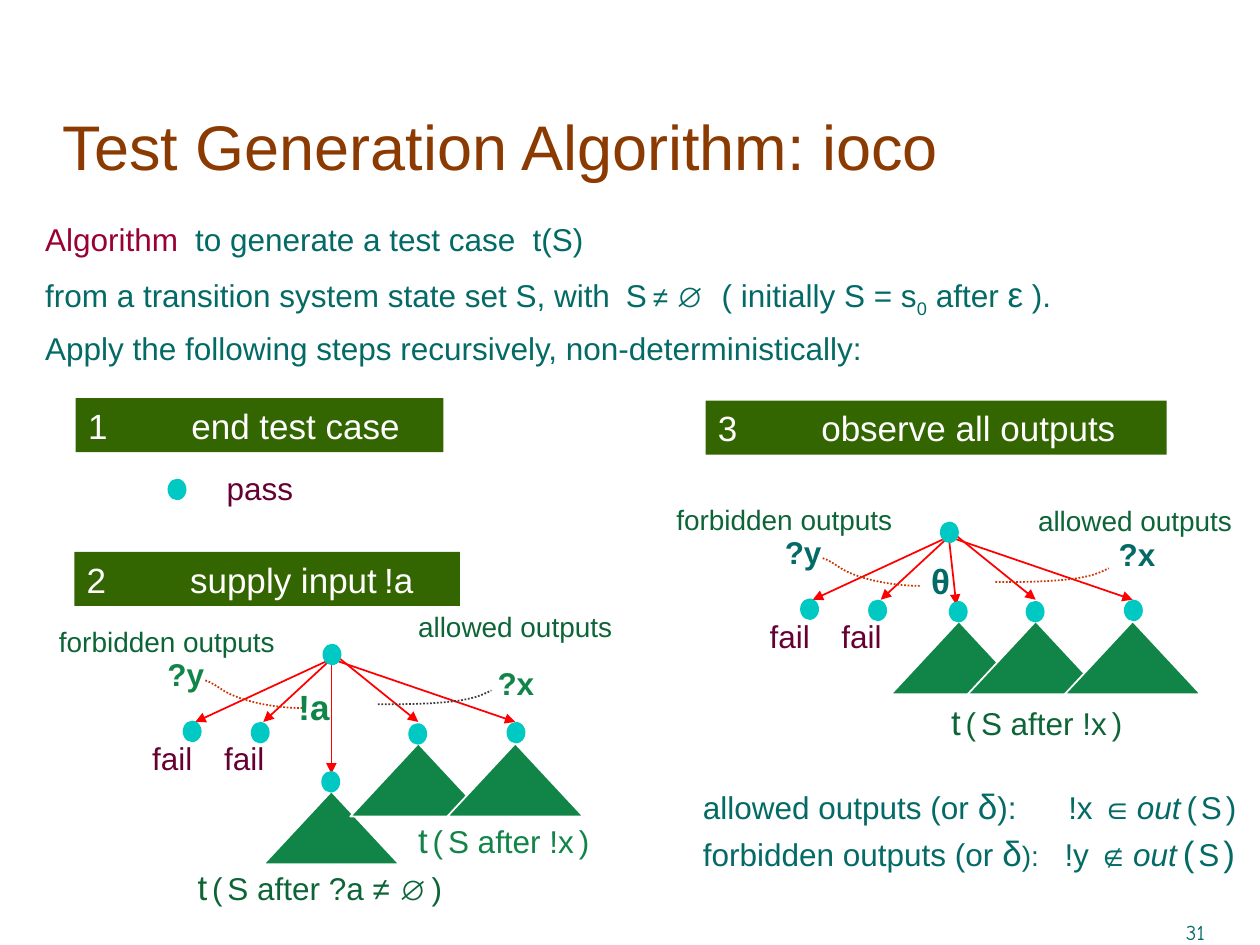
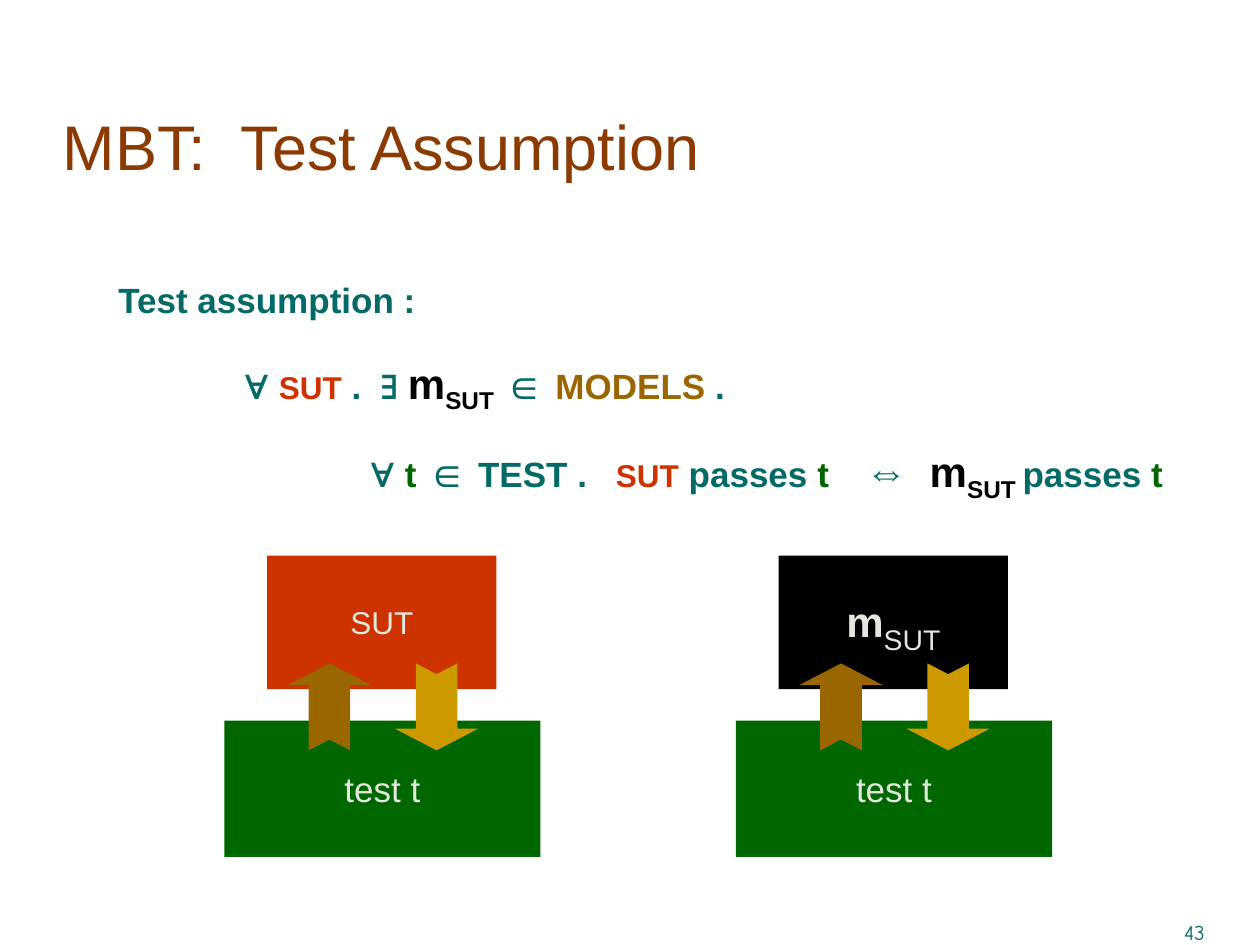
from lxml.etree import SubElement
from pptx import Presentation
from pptx.dml.color import RGBColor
from pptx.enum.dml import MSO_LINE
from pptx.enum.shapes import MSO_CONNECTOR, MSO_SHAPE
from pptx.enum.text import MSO_ANCHOR, PP_ALIGN
from pptx.oxml.ns import qn
from pptx.util import Inches, Pt

TEAL, BROWN, WINE, RED = "036A66", "8B3A02", "660033", "CC3300"
BAR, LEAF, PINE, DOT = "336600", "118548", "0D6537", "00C8C3"
GREEN, OCHRE, GOLD, PALE = "006600", "996600", "CC9900", "E3E7DE"
BLACK, WHITE = "000000", "FFFFFF"


def rgb(code):
    return RGBColor.from_string(code)


def add_tabs(para, stops):
    tabs = SubElement(para._p.get_or_add_pPr(), qn("a:tabLst"))
    for stop in stops:
        SubElement(tabs, qn("a:tab"), pos=str(Inches(stop)), algn="l")


def add_run(para, face, color, text, size, style="", tint=None):
    """Add one run; style letters are b bold, i italic, s subscript."""
    run = para.add_run()
    run.text = text
    font = run.font
    font.name, font.size = face, Pt(size)
    font.bold, font.italic = "b" in style, "i" in style
    font.color.rgb = rgb(tint or color)
    if "s" in style:
        run._r.get_or_add_rPr().set("baseline", "-25000")


def write(para, runs, color, face="Arial", tabs=(), ls=None, gap=0, align=None):
    """Fill a paragraph from runs of (text, size, style, tint)."""
    if tabs:
        add_tabs(para, tabs)
    if ls:
        para.line_spacing = ls
    if gap:
        para.space_before = Pt(gap)
    para.alignment = align
    for run in runs:
        add_run(para, face, color, *run)


def add_text(slide, box, runs, color, **look):
    frame = slide.shapes.add_textbox(*map(Inches, box)).text_frame
    frame.word_wrap = True
    write(frame.paragraphs[0], runs, color, **look)
    return frame


def add_form(slide, kind, box, fill, edge=None):
    form = slide.shapes.add_shape(kind, *map(Inches, box))
    form.shadow.inherit = False
    form.fill.solid()
    form.fill.fore_color.rgb = rgb(fill)
    if edge:
        form.line.color.rgb = rgb(edge)
        form.line.width = Pt(1)
    else:
        form.line.fill.background()
    return form


def add_block(slide, box, fill, runs):
    form = add_form(slide, MSO_SHAPE.RECTANGLE, box, fill)
    form.text_frame.word_wrap = False
    form.text_frame.vertical_anchor = MSO_ANCHOR.MIDDLE
    write(form.text_frame.paragraphs[0], runs, PALE, align=PP_ALIGN.CENTER)


def add_bar(slide, box, text, tabs):
    """Draw the heading of one step of the algorithm."""
    form = add_form(slide, MSO_SHAPE.RECTANGLE, box, BAR)
    frame = form.text_frame
    frame.vertical_anchor = MSO_ANCHOR.TOP
    write(frame.paragraphs[0], [(text, 20)], WHITE, tabs=tabs, align=PP_ALIGN.LEFT)


def add_dot(slide, x, y):
    add_form(slide, MSO_SHAPE.OVAL, (x, y, 0.15, 0.17), DOT)


def add_arrow(slide, start, end):
    line = slide.shapes.add_connector(
        MSO_CONNECTOR.STRAIGHT, *map(Inches, (*start, *end)))
    line.line.color.rgb = rgb("FF0000")
    line.line.width = Pt(1)
    props = line._element.spPr
    SubElement(props.get_or_add_ln(), qn("a:tailEnd"), type="triangle")
    SubElement(props, qn("a:effectLst"))


def add_curve(slide, x, y, knots, color, steps=10):
    """Draw dotted cubic curves: a start, then three knots for each curve."""
    knots = [(x + dx, y + dy) for dx, dy in knots]
    points = []
    for i in range(0, len(knots) - 1, 3):
        for step in range(1, steps + 1):
            t = step / steps
            parts = ((1 - t) ** 3, 3 * t * (1 - t) ** 2, 3 * t * t * (1 - t), t ** 3)
            points.append(tuple(
                Inches(sum(w * knot[axis] for w, knot in zip(parts, knots[i:i + 4])))
                for axis in (0, 1)))
    pen = slide.shapes.build_freeform(*map(Inches, knots[0]))
    pen.add_line_segments(points, close=False)
    curve = pen.convert_to_shape()
    curve.shadow.inherit = False
    curve.fill.background()
    curve.line.color.rgb = rgb(color)
    curve.line.width = Pt(1)
    curve.line.dash_style = MSO_LINE.ROUND_DOT


def add_tree(slide, x, y, mid, tip, peak, mark, curve, spots):
    """Draw a test tree whose root dot is at x, y; spots place the right labels."""
    def at(dx, dy):
        return x + dx, y + dy

    for end in (-1.01, 0.62), (-0.47, 0.62), tip, (1.53, 0.62):
        add_arrow(slide, at(0.07, 0.12), at(*end))
    add_arrow(slide, at(0.14, 0.12), at(0.76, 0.62))
    for top in peak, (0.22, 0.79), (0.99, 0.79):
        add_form(slide, MSO_SHAPE.ISOSCELES_TRIANGLE, (*at(*top), 1.08, 0.58), LEAF, WHITE)
    add_curve(slide, *at(-0.93, 0.29), [
        (0, 0), (0.06, 0.02), (0.11, 0.06), (0.16, 0.09),
        (0.32, 0.18), (0.59, 0.22), (0.77, 0.22)], RED)
    add_curve(slide, *at(0.44, 0.37), [
        (0, 0.11), (0.21, 0.11), (0.43, 0.11), (0.65, 0.08), (0.7, 0.07),
        (0.76, 0.06), (0.81, 0.04), (0.84, 0.03), (0.9, 0), (0.9, 0)], curve)
    for dot in (0, 0), (-1.11, 0.61), (-0.57, 0.62), mid, (0.68, 0.63), (1.46, 0.62):
        add_dot(slide, *at(*dot))
    for dx in -1.45, -0.88:
        add_text(slide, (*at(dx, 0.71), 0.69, 0.4), [("fail", 18)], WINE)
    allowed, out = spots
    add_text(slide, (*at(-2.19, -0.2), 2.2, 0.37), [("forbidden outputs", 16)], PINE)
    add_text(slide, (*at(*allowed), 1.86, 0.37), [("allowed outputs", 16)], PINE)
    add_text(slide, (*at(-1.33, 0.04), 0.58, 0.4), [("?y", 18, "b")], mark)
    add_text(slide, (*at(*out), 0.62, 0.4), [("?x", 18, "b")], mark)


def add_after(slide, box, state, color):
    """Label a subtree with t(state)."""
    runs = [("t", 20), (" ", 10), ("(", 18), (" ", 10), *state, (" ", 10), (")", 18)]
    add_text(slide, box, runs, color)


def out_set(size):
    return [(" ", 8), ("out", 18, "i"), (" ", 12), ("(", size), (" ", 8),
            ("S", 18), (" ", 8), (")", size)]


def new_slide(deck, title, number, tabs=()):
    slide = deck.slides.add_slide(deck.slide_layouts[6])
    frame = add_text(slide, (0.5, 0.92, 9, 0.67), [(title, 36)], BROWN, ls=0.9, tabs=tabs)
    frame.margin_left = frame.margin_right = frame.margin_top = frame.margin_bottom = 0
    add_text(slide, (8.74, 7.25, 0.92, 0.25), [(number, 12)], TEAL,
             face="Comic Neue", align=PP_ALIGN.RIGHT)
    return slide


def add_intro(slide, box):
    tabs = (1.19, 3.87, 4.61, 5.37)
    frame = add_text(slide, box, [
        ("Algorithm", 18, "", "990033"), ("\tto generate a test case\tt(S)", 18),
    ], TEAL, ls=1.3, tabs=tabs)
    write(frame.add_paragraph(), [
        ("from a transition system state set S, with\tS", 18), (" ", 12), ("≠ ∅", 16),
        ("\t( initially S = s", 18), ("0", 18, "s"), (" after ", 18), ("ε", 20), (" ).", 18),
    ], TEAL, ls=1.3, tabs=tabs)
    write(frame.add_paragraph(), [
        ("Apply the following steps recursively, non-deterministically:", 18),
    ], TEAL, ls=0.8, gap=10)


def add_legend(slide, box):
    frame = add_text(slide, box, [
        ("allowed outputs (or ", 18), ("δ", 20), ("):\t!x ∈", 18), *out_set(18),
    ], TEAL, ls=0.7, tabs=[2.9])
    write(frame.add_paragraph(), [
        ("forbidden outputs (or ", 18), ("δ", 20), ("):", 16), ("\t!y ∉", 18), *out_set(20),
    ], TEAL, ls=0.7, gap=10, tabs=[2.87])


def algorithm_slide(deck):
    slide = new_slide(deck, "Test Generation Algorithm: ioco", "31")
    add_intro(slide, (0.26, 1.61, 9.74, 1.32))
    add_bar(slide, (0.6, 3.16, 2.92, 0.43), "1\tend test case", [0.82])
    add_dot(slide, 1.33, 3.8)
    add_text(slide, (1.7, 3.67, 1, 0.4), [("pass", 18)], WINE)

    add_bar(slide, (0.59, 4.38, 3.06, 0.43), "2\tsupply input\t!a", [0.82, 2.36])
    add_tree(slide, 2.56, 5.11, mid=(-0.01, 1.01), tip=(0.07, 1.03), peak=(-0.47, 1.17),
             mark=LEAF, curve="3B3B3B", spots=((0.66, -0.32), (1.29, 0.11)))
    add_text(slide, (2.27, 5.39, 0.59, 0.43), [("!a", 20, "b")], LEAF)
    add_after(slide, (3.22, 6.45, 1.92, 0.43), [("S after !x", 18)], LEAF)
    add_after(slide, (1.47, 6.82, 2.36, 0.43),
              [("S after ?a ≠ ", 18), ("∅", 16, "b")], PINE)

    add_bar(slide, (5.6, 3.18, 3.66, 0.43), "3\tobserve all outputs", [0.82])
    add_tree(slide, 7.46, 4.14, mid=(0.07, 0.63), tip=(0.13, 0.66), peak=(-0.39, 0.79),
             mark=TEAL, curve=RED, spots=((0.68, -0.19), (1.32, 0.06)))
    theta = add_text(slide, (7.29, 4.45, 0.35, 0.37), [("θ", 20, "b")], TEAL,
                     ls=0.8, align=PP_ALIGN.CENTER)
    theta.word_wrap = False
    theta.vertical_anchor = MSO_ANCHOR.MIDDLE
    add_after(slide, (7.45, 5.51, 1.99, 0.43), [("S after !x", 18)], PINE)
    add_legend(slide, (5.48, 6.27, 4.52, 0.73))


def add_claim(slide, box):
    model = [("m", 24, "b", BLACK), ("SUT", 24, "bs", BLACK)]
    sut = ("SUT", 18, "b", RED)
    member = [("∈", 24, "b"), (" ", 20, "b")]
    test = ("t", 20, "b", GREEN)
    frame = add_text(slide, box, [("Test assumption :", 20, "b")], TEAL, ls=0.9)
    write(frame.add_paragraph(), [
        ("\t∀", 24, "b"), (" ", 20, "b"), sut, (" .\t", 20, "b"), ("∃", 24, "b"),
        (" ", 20, "b"), *model, (" ", 20, "b"), *member,
        ("MODELS ", 20, "b", OCHRE), (".", 20, "b"),
    ], TEAL, ls=0.9, gap=21, tabs=[1, 2.08])
    write(frame.add_paragraph(), [
        ("\t∀", 24, "b"), (" ", 20, "b"), test, (" ", 20, "b"), *member,
        ("TEST .\t", 20, "b"), sut, (" passes ", 20, "b"), test,
        ("\t⇔", 24, "b"), ("\t", 20, "b"), *model, (" ", 24, "bs"),
        ("passes ", 20, "b"), test,
    ], TEAL, ls=0.9, gap=21, tabs=[2, 3.95, 5.93, 6.44])


def add_pair(slide, x, y, fill, runs):
    """Draw a system above its test, with an arrow each way between them."""
    add_block(slide, (x + 0.34, y, 1.82, 1.06), fill, runs)
    add_block(slide, (x, y + 1.31, 2.51, 1.08), GREEN, [("test t", 20)])
    for dx, turn, color in (0.49, 270, OCHRE), (1.34, 90, GOLD):
        arrow = add_form(slide, MSO_SHAPE.NOTCHED_RIGHT_ARROW,
                         (x + dx, y + 0.87, 0.69, 0.66), color)
        arrow.adjustments[0], arrow.adjustments[1] = 0.5, 0.26
        arrow.rotation = turn


def assumption_slide(deck):
    slide = new_slide(deck, "MBT:\tTest Assumption", "43", tabs=[1.41])
    add_claim(slide, (0.84, 2.2, 8.55, 1.72))
    add_pair(slide, 1.78, 4.41, RED, [("SUT", 18)])
    add_pair(slide, 5.84, 4.41, BLACK, [("m", 24, "b"), ("SUT", 28, "s")])


def main():
    deck = Presentation()
    deck.slide_width, deck.slide_height = Inches(10), Inches(7.5)
    algorithm_slide(deck)
    assumption_slide(deck)
    deck.save("out.pptx")


if __name__ == "__main__":
    main()
